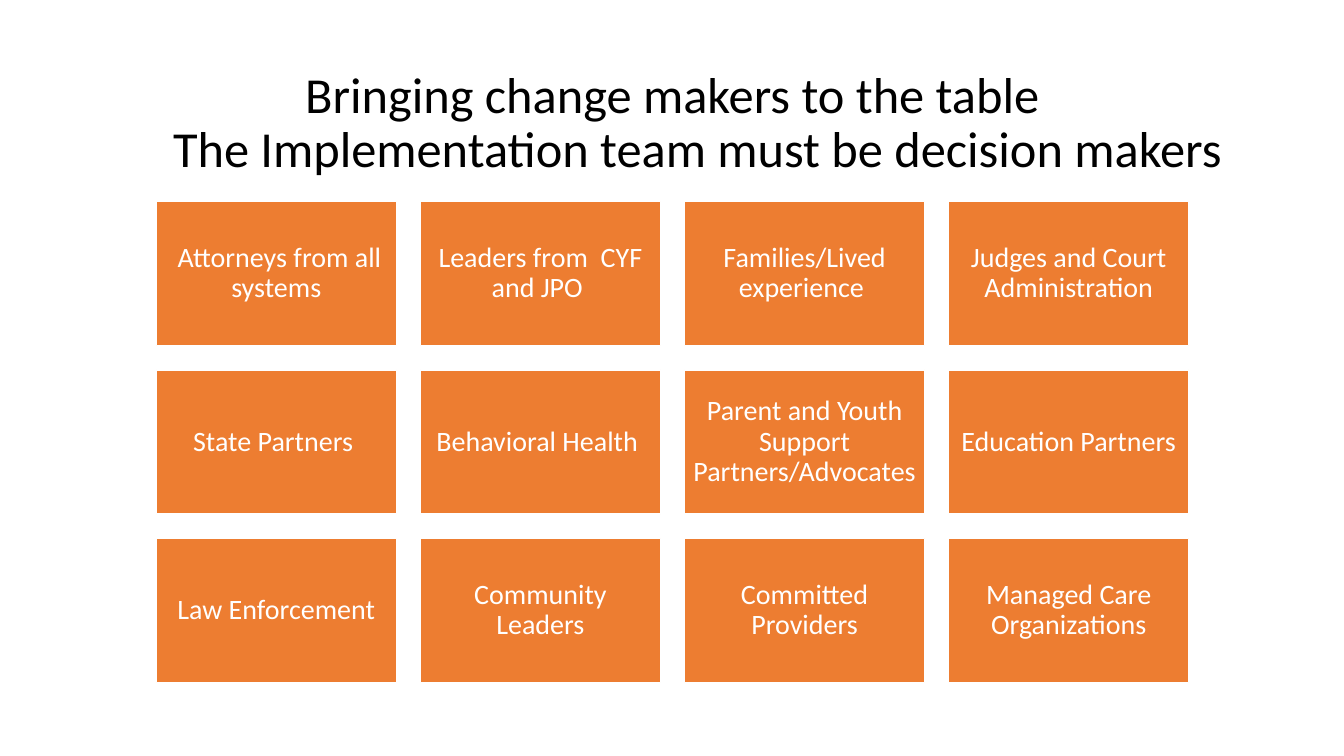
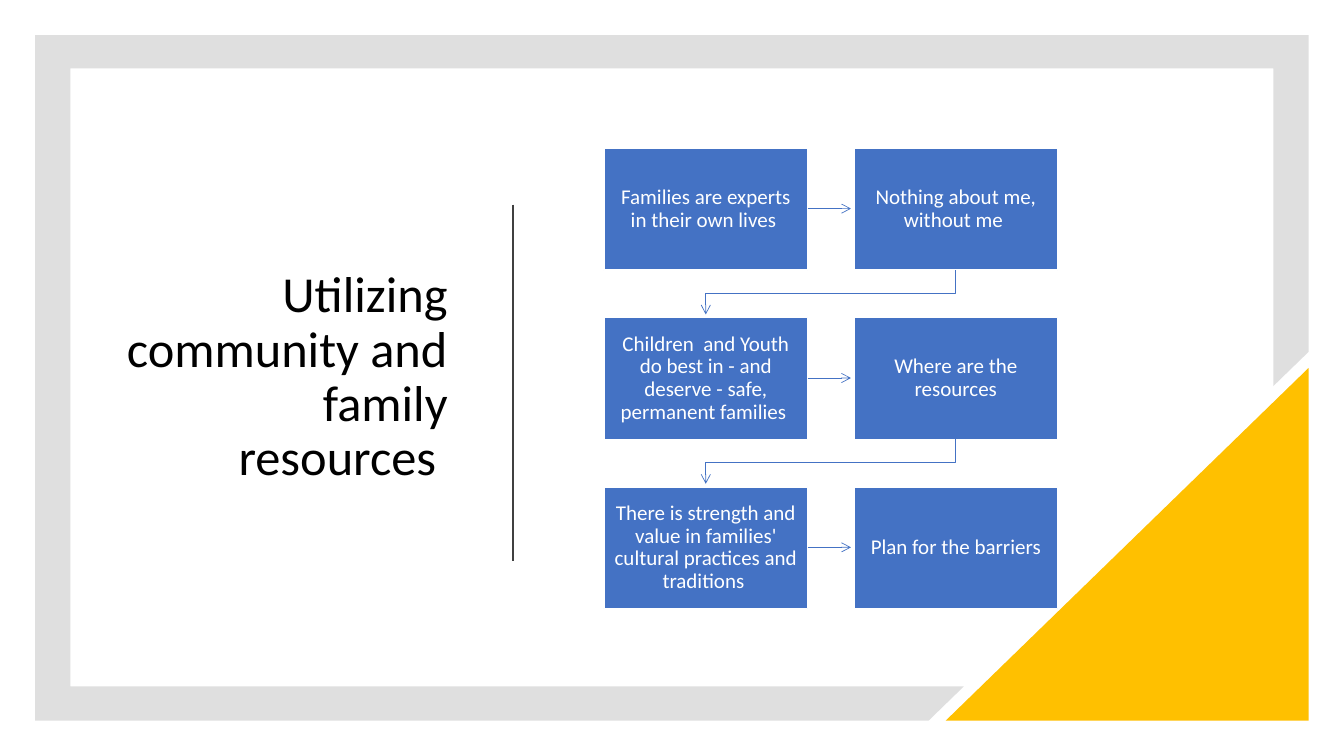
import pptx
import pptx.util
import pptx.dml.color
import pptx.enum.shapes
import pptx.enum.text
import pptx.oxml.ns
import lxml.etree

# Content
TEAM_TITLE = ["Bringing change makers to the table",
              "\tThe Implementation team must be decision makers"]
TEAM_MEMBERS = [
    " Attorneys from all systems", "Leaders from  CYF and JPO ",
    "Families/Lived experience ", "Judges and Court Administration",
    "State Partners ", "Behavioral Health ",
    "Parent and Youth Support Partners/Advocates", "Education Partners",
    "Law Enforcement", "Community Leaders",
    "Committed Providers", "Managed Care Organizations",
]
RESOURCES_TITLE = ["Utilizing community and family resources "]
RESOURCE_STEPS = [
    "Families are experts in their own lives ",
    "Nothing about me, without me ",
    "Children  and Youth do best in - and deserve - safe, permanent families ",
    "Where are the resources",
    "There is strength and value in families' cultural practices and traditions ",
    "Plan for the barriers",
]

# Shared style; lengths are px, 100 to the inch
PX = 9144
FONT = "Calibri"
COLORS = {"text": "000000", "white": "FFFFFF", "team": "ED7D31", "step": "4472C4",
          "frame": "808080", "corner": "FFC000", "divider": "404040"}
TEAM_GRID = dict(left=155, top=200, width=238, height=143, gap_x=24, gap_y=24, columns=4)
STEP_GRID = dict(left=599, top=147, width=202, height=121, gap_x=46, gap_y=47, columns=2)
FRAME_OUTLINE = [(35, 35), (1298, 35), (1298, 349), (1263, 383), (1263, 68), (70, 68),
                 (70, 681), (956, 681), (921, 715), (35, 715)]

ALIGN = pptx.enum.text.PP_ALIGN
MIDDLE = pptx.enum.text.MSO_ANCHOR.MIDDLE
SHAPE = pptx.enum.shapes.MSO_SHAPE
STRAIGHT = pptx.enum.shapes.MSO_CONNECTOR.STRAIGHT
qn = pptx.oxml.ns.qn


def rgb(name):
    return pptx.dml.color.RGBColor.from_string(COLORS[name])


def paint(shape, fill=None, line=None, weight=1):
    shape.shadow.inherit = False
    if fill:
        shape.fill.solid()
        shape.fill.fore_color.rgb = rgb(fill)
    else:
        shape.fill.background()
    if line:
        shape.line.color.rgb = rgb(line)
        shape.line.width = pptx.util.Pt(weight)
    else:
        shape.line.fill.background()


def write(frame, lines, size, color, align):
    frame.word_wrap = True
    frame.auto_size = pptx.enum.text.MSO_AUTO_SIZE.NONE
    frame.vertical_anchor = MIDDLE
    paragraph = frame.paragraphs[0]
    paragraph.alignment = align
    paragraph.line_spacing = 0.9
    for index, line in enumerate(lines):
        if index:
            paragraph.add_line_break()
        run = paragraph.add_run()
        run.text = line
        run.font.name = FONT
        run.font.size = pptx.util.Pt(size)
        run.font.color.rgb = rgb(color)


def titled_slide(deck, lines, box, align):
    slide = deck.slides.add_slide(deck.slide_layouts[5])
    title = slide.shapes.title
    title.left, title.top, title.width, title.height = (n * PX for n in box)
    write(title.text_frame, lines, 36, "text", align)
    return slide


def grid_cells(count, left, top, width, height, gap_x, gap_y, columns):
    return [(left + i % columns * (width + gap_x),
             top + i // columns * (height + gap_y), width, height) for i in range(count)]


def add_cards(slide, texts, grid, fill, size, inset):
    cells = grid_cells(len(texts), **grid)
    for text, cell in zip(texts, cells):
        card = slide.shapes.add_shape(SHAPE.RECTANGLE, *(n * PX for n in cell))
        paint(card, fill, "white")
        frame = card.text_frame
        frame.margin_left = frame.margin_right = inset * PX
        frame.margin_top = frame.margin_bottom = inset * PX
        write(frame, [text], size, "white", ALIGN.CENTER)
    return cells


def add_outline(slide, points, close):
    builder = slide.shapes.build_freeform(*points[0], scale=PX)
    builder.add_line_segments(points[1:], close=close)
    return builder.convert_to_shape()


def add_line(slide, start, end, color, weight):
    line = slide.shapes.add_connector(STRAIGHT, *(n * PX for n in start + end))
    line.line.color.rgb = rgb(color)
    line.line.width = pptx.util.Pt(weight)
    lxml.etree.SubElement(line._element.spPr, qn("a:effectLst"))
    return line


def add_arrowhead(line):
    outline = line._element.spPr.find(qn("a:ln"))
    lxml.etree.SubElement(outline, qn("a:tailEnd"), type="arrow")


def build_team(deck):
    slide = titled_slide(deck, TEAM_TITLE, (92, 61, 1150, 124), ALIGN.CENTER)
    add_cards(slide, TEAM_MEMBERS, TEAM_GRID, "team", 20, 8)


def build_resources(deck):
    slide = titled_slide(deck, RESOURCES_TITLE, (110, 130, 344, 490), ALIGN.RIGHT)

    # Translucent frame, cut by the corner triangle
    frame = add_outline(slide, FRAME_OUTLINE, True)
    paint(frame, "frame")
    tint = frame._element.spPr.find(qn("a:solidFill"))[0]
    lxml.etree.SubElement(tint, qn("a:alpha"), val="25000")
    corner = slide.shapes.add_shape(SHAPE.RIGHT_TRIANGLE,
                                    *(n * PX for n in (938, 365, 360, 350)))
    paint(corner, "corner")
    corner._element.spPr.find(qn("a:xfrm")).set("flipH", "1")
    add_line(slide, (509, 203), (509, 557), "divider", 1.5)

    # Steps, joined across each row and then down to the next
    cells = add_cards(slide, RESOURCE_STEPS, STEP_GRID, "step", 15, 10)
    for (x, y, width, height), (next_x, next_y, _, _) in zip(cells, cells[1:]):
        if y == next_y:
            middle = y + height // 2
            arrow = add_line(slide, (x + width, middle), (next_x - 3, middle), "step", 0.5)
        else:
            start_x, end_x = x + width // 2, next_x + width // 2
            bottom = y + height
            bend = (bottom + next_y) // 2
            arrow = add_outline(slide, [(start_x, bottom), (start_x, bend),
                                        (end_x, bend), (end_x, next_y - 3)], False)
            paint(arrow, line="step", weight=0.5)
        add_arrowhead(arrow)


def main():
    deck = pptx.Presentation()
    deck.slide_width = pptx.util.Inches(13.33)
    deck.slide_height = pptx.util.Inches(7.5)
    build_team(deck)
    build_resources(deck)
    deck.save("out.pptx")


if __name__ == "__main__":
    main()
